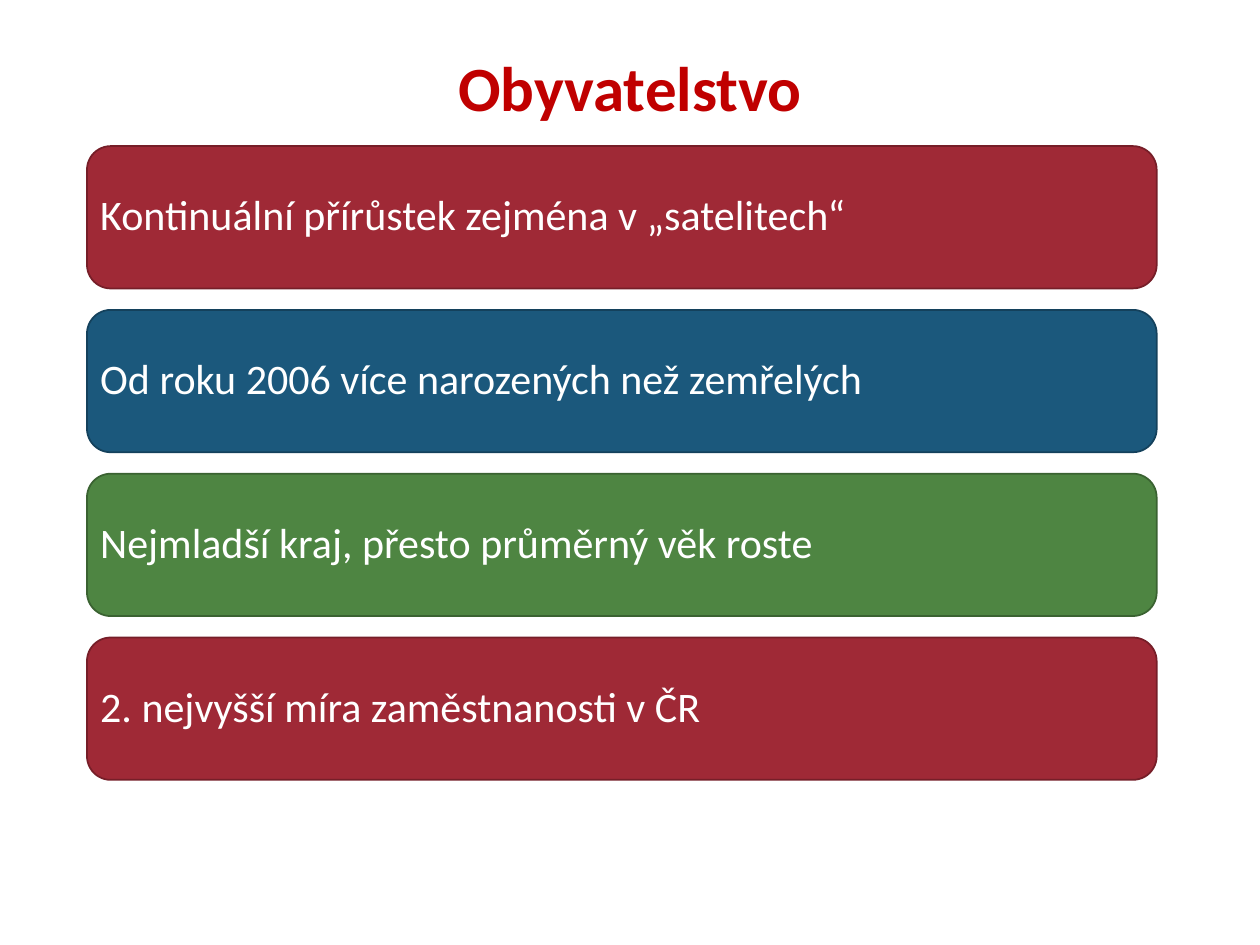
from dataclasses import dataclass

from pptx import Presentation
from pptx.dml.color import RGBColor
from pptx.enum.shapes import MSO_SHAPE as Shape
from pptx.enum.text import MSO_ANCHOR as Anchor, PP_ALIGN as Align
from pptx.util import Inches, Pt

COLORS = {
    "title": "C00000",
    "white": "FFFFFF",
    "red": "9F2936",
    "red_line": "761E28",
    "blue": "1B587C",
    "blue_line": "14415C",
    "green": "4E8542",
    "green_line": "3A6231",
}
FONT = "Calibri"
LEFT = 0.69
BAR_TOP, BAR_WIDTH, BAR_HEIGHT, BAR_STEP = 1.16, 8.49, 1.13, 1.3


@dataclass
class Bar:
    text: str
    color: str


BARS = [
    Bar("Kontinuální přírůstek zejména v „satelitech“", "red"),
    Bar("Od roku 2006 více narozených než zemřelých", "blue"),
    Bar("Nejmladší kraj, přesto průměrný věk roste", "green"),
    Bar("2. nejvyšší míra zaměstnanosti v ČR", "red"),
]


def rgb(name: str) -> RGBColor:
    return RGBColor.from_string(COLORS[name])


def write_text(shape, text: str, *, size: int, color: str, bold: bool = False,
               align: Align = Align.LEFT, anchor: Anchor = Anchor.TOP,
               side_margin: float = 0.1) -> None:
    frame = shape.text_frame
    frame.word_wrap = True
    frame.vertical_anchor = anchor
    frame.margin_left = frame.margin_right = Inches(side_margin)
    paragraph = frame.paragraphs[0]
    paragraph.text = text
    paragraph.alignment = align
    paragraph.line_spacing = 0.9
    font = paragraph.font
    font.name = FONT
    font.size = Pt(size)
    font.bold = bold
    font.color.rgb = rgb(color)


def add_bar(slide, bar: Bar, index: int) -> None:
    shape = slide.shapes.add_shape(
        Shape.ROUNDED_RECTANGLE, Inches(LEFT), Inches(BAR_TOP + index * BAR_STEP),
        Inches(BAR_WIDTH), Inches(BAR_HEIGHT))
    shape.shadow.inherit = False
    shape.fill.solid()
    shape.fill.fore_color.rgb = rgb(bar.color)
    shape.line.color.rgb = rgb(f"{bar.color}_line")
    shape.line.width = Pt(1)
    write_text(shape, bar.text, size=24, color="white", anchor=Anchor.MIDDLE,
               side_margin=0.05)


def main() -> None:
    presentation = Presentation()
    presentation.slide_width = Inches(10)
    presentation.slide_height = Inches(7.5)
    slide = presentation.slides.add_slide(presentation.slide_layouts[6])
    title = slide.shapes.add_textbox(Inches(LEFT), Inches(0.4), Inches(8.62), Inches(1.15))
    write_text(title, "Obyvatelstvo", size=36, color="title", bold=True, align=Align.CENTER)
    for index, bar in enumerate(BARS):
        add_bar(slide, bar, index)
    presentation.save("out.pptx")


if __name__ == "__main__":
    main()
